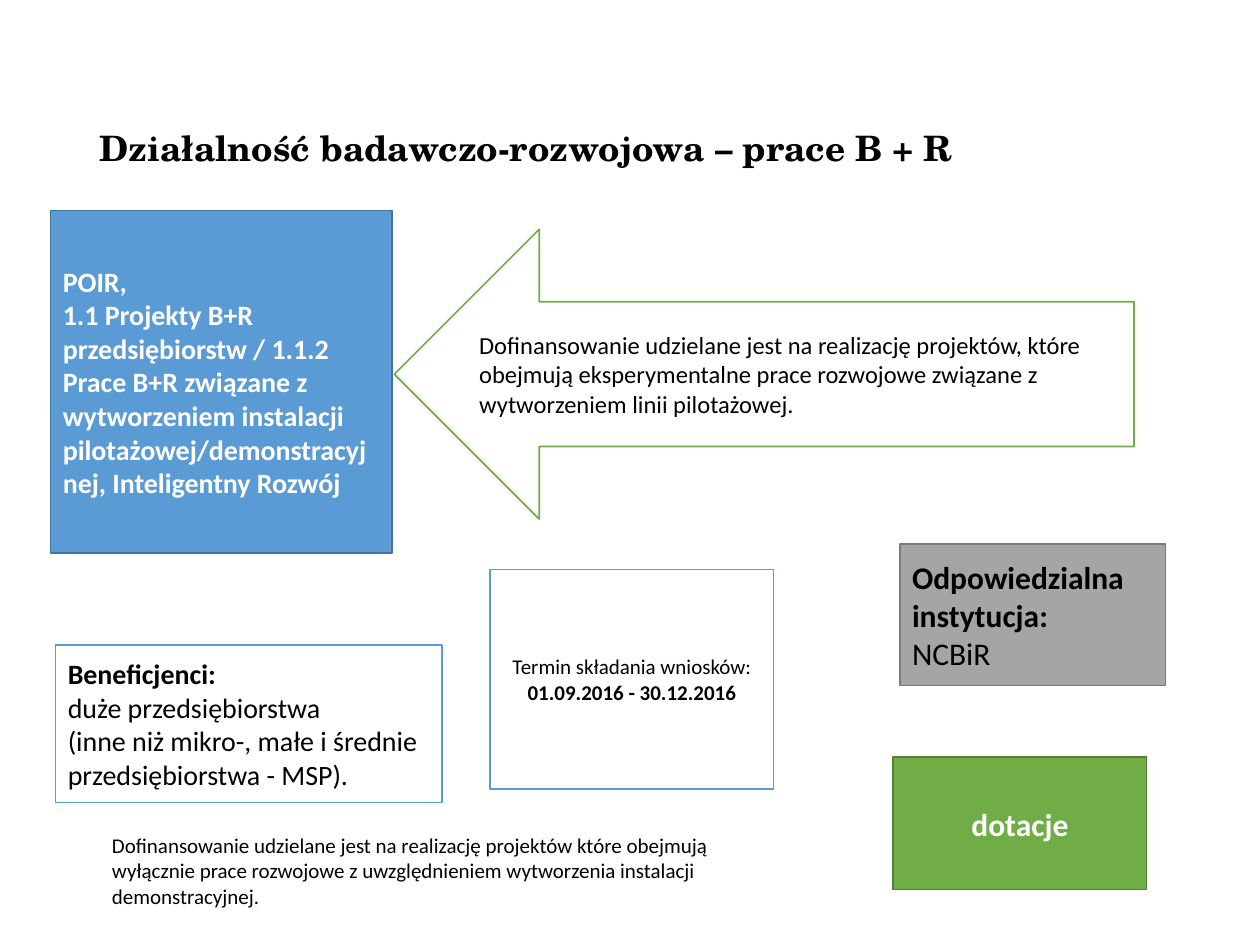
from pptx import Presentation
from pptx.dml.color import RGBColor
from pptx.enum.shapes import MSO_SHAPE
from pptx.enum.text import MSO_ANCHOR, MSO_AUTO_SIZE, PP_ALIGN
from pptx.util import Inches, Pt

RECT, ARROW = MSO_SHAPE.RECTANGLE, MSO_SHAPE.LEFT_ARROW
LEFT, MID = PP_ALIGN.LEFT, PP_ALIGN.CENTER
TOP, CENTRE = MSO_ANCHOR.TOP, MSO_ANCHOR.MIDDLE
FIXED = MSO_AUTO_SIZE.NONE
COLS, ROWS = 100, 75
WHITE, BLACK, BLUE, GREEN = "FFFFFF", "000000", "5B9BD5", "70AD47"


def tint(code):
    """Turn a hex string into a colour."""
    return RGBColor.from_string(code)


def assign(item, values):
    """Set each attribute named in a dict of format values."""
    for name, value in values.items():
        setattr(item, name, value)


class Deck:
    """Hold the style and the current slide."""

    def __init__(self):
        """Open a deck with one title-only slide."""
        self.show = Presentation()
        assign(self.show, {"slide_width": Inches(10), "slide_height": Inches(7.5)})
        self.slide = self.show.slides.add_slide(self.show.slide_layouts[5])
        self.face, self.head = "Calibri", "TeX Gyre Schola"

    def place(self, left, top, width, height):
        """Turn columns and rows of the grid into lengths."""
        col, row = self.show.slide_width / COLS, self.show.slide_height / ROWS
        return [int(n * unit) for n, unit in zip((left, top, width, height), (col, row) * 2)]

    def style(self, run, size, ink, bold, face):
        """Format one run of text."""
        assign(run.font, {"size": Pt(size), "bold": bold, "name": face})
        run.font.color.rgb = tint(ink)

    def label(self, frame, lines, size, ink=BLACK, align=LEFT, anchor=CENTRE):
        """Fill a frame with (text, bold) paragraphs."""
        assign(frame, {"word_wrap": True, "auto_size": FIXED, "vertical_anchor": anchor})
        for i, (text, bold) in enumerate(lines):
            para = frame.add_paragraph() if i else frame.paragraphs[0]
            para.alignment = align
            run = para.add_run()
            run.text = text
            self.style(run, size, ink, bold, self.face)

    def title(self, area, text, size):
        """Move and format the title, with an open line below it."""
        box = self.slide.shapes.title
        assign(box, dict(zip(("left", "top", "width", "height"), self.place(*area))))
        frame = box.text_frame
        assign(frame, {"word_wrap": True, "auto_size": FIXED, "vertical_anchor": CENTRE})
        para = frame.paragraphs[0]
        assign(para, {"alignment": LEFT, "line_spacing": 0.9})
        run = para.add_run()
        run.text = text
        self.style(run, size, BLACK, True, self.head)
        para.add_line_break()

    def block(self, area, lines, size, fill, edge, kind=RECT, **look):
        """Add a filled, outlined shape with text."""
        shape = self.slide.shapes.add_shape(kind, *self.place(*area))
        shape.shadow.inherit = False
        shape.fill.solid()
        shape.fill.fore_color.rgb = tint(fill)
        shape.line.color.rgb = tint(edge)
        shape.line.width = Pt(1)
        self.label(shape.text_frame, lines, size, **look)

    def note(self, area, lines, size):
        """Add a plain text box."""
        box = self.slide.shapes.add_textbox(*self.place(*area))
        self.label(box.text_frame, lines, size, anchor=TOP)


def main():
    """Build and save the slide."""
    deck = Deck()
    deck.title((6.9, 10.5, 86.2, 10.2), "Działalność badawczo-rozwojowa – prace B + R", 20)
    deck.block((4, 16.7, 27.1, 27.2), [
        ("POIR,", True),
        ("1.1 Projekty B+R przedsiębiorstw / 1.1.2 Prace B+R związane z wytworzeniem "
         "instalacji pilotażowej/demonstracyjnej, Inteligentny Rozwój", True),
    ], 16, BLUE, "43739E", ink=WHITE)
    deck.block((31.3, 18.2, 58.7, 23), [
        ("Dofinansowanie udzielane jest na realizację projektów, które obejmują "
         "eksperymentalne prace rozwojowe związane z wytworzeniem linii pilotażowej.", False),
    ], 14, WHITE, GREEN, ARROW)
    deck.block((4.4, 51.2, 30.7, 12.5), [
        ("Beneficjenci:", True),
        ("duże przedsiębiorstwa", False),
        ("(inne niż mikro-, małe i średnie przedsiębiorstwa - MSP).", False),
    ], 16, WHITE, BLUE)
    deck.block((38.9, 45.2, 22.5, 17.4), [
        ("Termin składania wniosków:", False),
        ("01.09.2016 - 30.12.2016", True),
    ], 12, WHITE, BLUE, align=MID)
    deck.block((71.4, 43.2, 21.1, 11.2), [
        ("Odpowiedzialna instytucja:", True),
        ("NCBiR", False),
    ], 18, "A5A5A5", "7A7A7A")
    deck.block((70.9, 60.1, 20.1, 10.5), [("dotacje", True)], 18, GREEN, "538035",
               ink=WHITE, align=MID)
    deck.note((7.9, 65.6, 55.4, 9.1), [
        ("Dofinansowanie udzielane jest na realizację projektów które obejmują wyłącznie "
         "prace rozwojowe z uwzględnieniem wytworzenia instalacji demonstracyjnej.", False),
    ], 12)
    deck.show.save("out.pptx")


if __name__ == "__main__":
    main()
